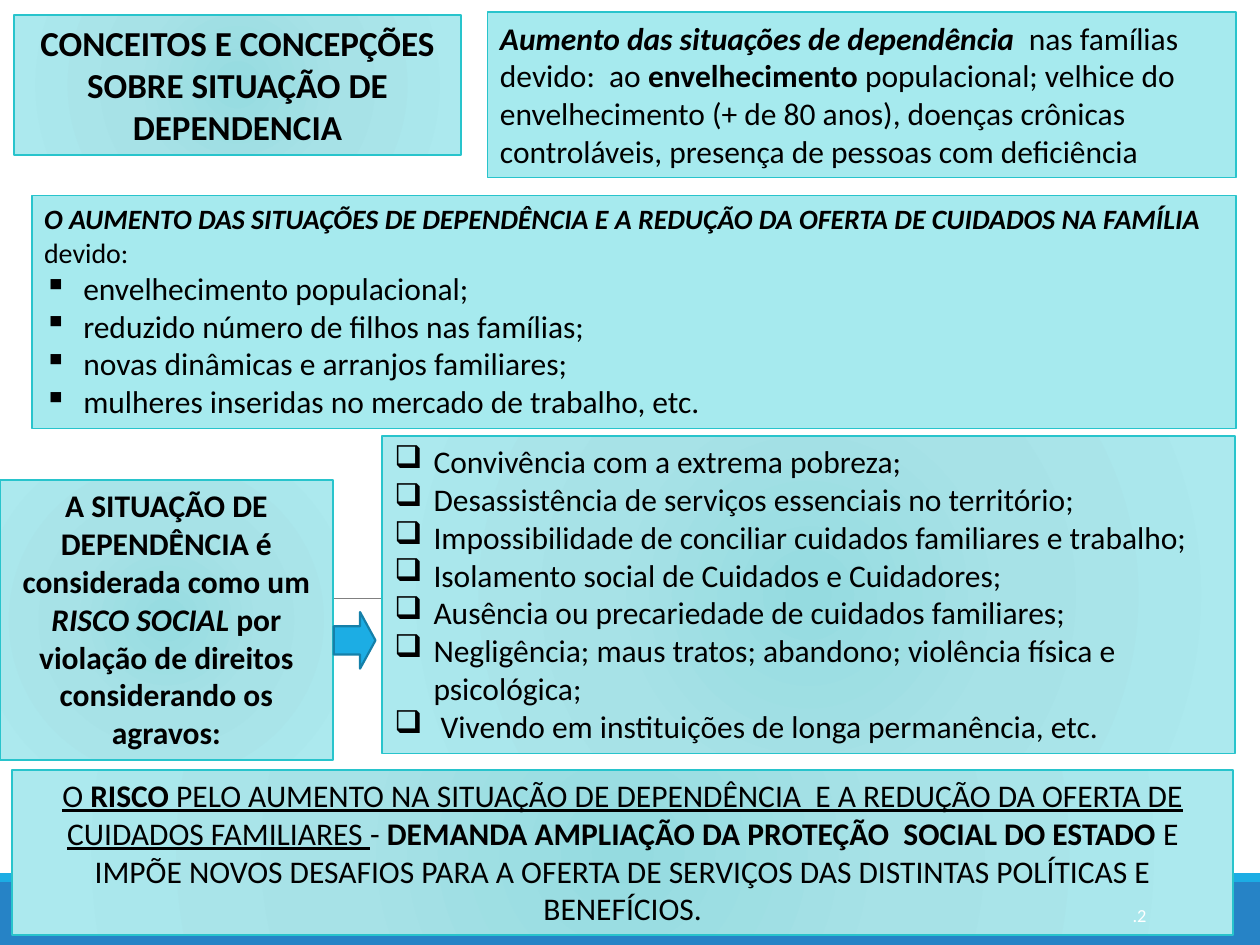
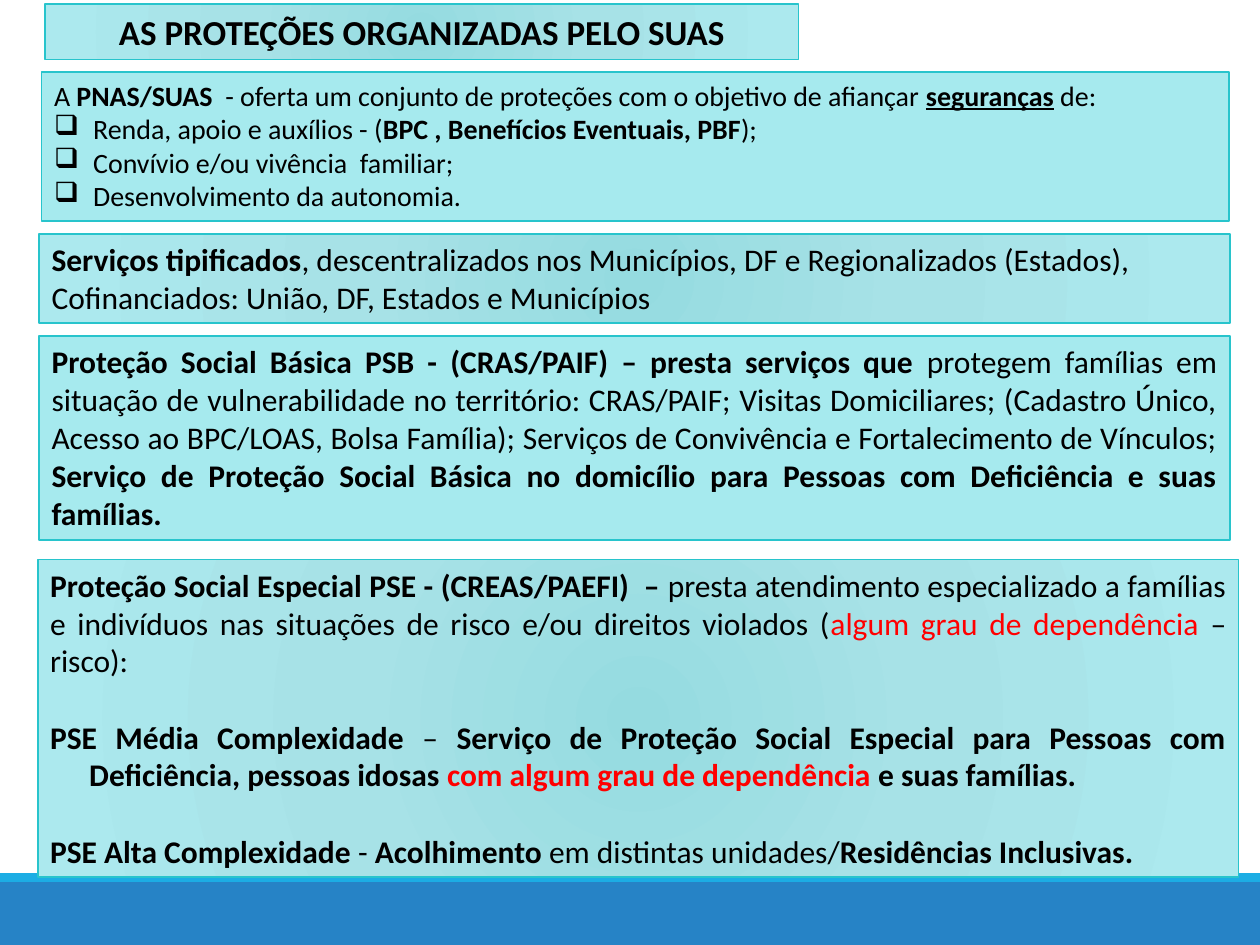
from lxml import etree
from pptx import Presentation
from pptx.dml.color import RGBColor
from pptx.enum.shapes import MSO_CONNECTOR, MSO_SHAPE
from pptx.enum.text import MSO_ANCHOR, MSO_AUTO_SIZE, PP_ALIGN
from pptx.oxml import parse_xml
from pptx.oxml.ns import nsdecls, qn
from pptx.util import Cm, Pt

RECT, ARROW = MSO_SHAPE.RECTANGLE, MSO_SHAPE.RIGHT_ARROW
STRAIGHT = MSO_CONNECTOR.STRAIGHT
TOP, MIDDLE = MSO_ANCHOR.TOP, MSO_ANCHOR.MIDDLE
GROW = MSO_AUTO_SIZE.SHAPE_TO_FIT_TEXT
LEFT, CENTER, RIGHT, JUST = (PP_ALIGN.LEFT, PP_ALIGN.CENTER,
                             PP_ALIGN.RIGHT, PP_ALIGN.JUSTIFY)

BLACK = RGBColor(0x00, 0x00, 0x00)
WHITE = RGBColor(0xFF, 0xFF, 0xFF)
RED = RGBColor(0xFF, 0x00, 0x00)
GRAY = RGBColor(0x80, 0x80, 0x80)
BLUE = RGBColor(0x26, 0x83, 0xC6)
SKY = RGBColor(0x1C, 0xAD, 0xE4)
NAVY = RGBColor(0x15, 0x80, 0xA9)
TEAL = RGBColor(0x28, 0xC4, 0xCC)
AQUA = RGBColor(0xA6, 0xEA, 0xEE)
GLOW = ((0, RGBColor(0x95, 0xDB, 0xE0)),
        (45, RGBColor(0xA7, 0xE2, 0xE7)),
        (100, RGBColor(0xAC, 0xE9, 0xEE)))

FONT = "Calibri"
WIDTH, HEIGHT = 25.4, 19.05
HANG = Cm(0.79)
CHECK, SQUARE = "❑", "▪"


def para(*runs, mark=None, hang=False, size=None, gap=0):
    """Describe a paragraph; a run is text or (text, flags from b, i, u, r)."""
    return dict(runs=runs, mark=mark, hang=hang or bool(mark),
                size=size, gap=gap)


def items(mark, *lines):
    return [para(line, mark=mark) for line in lines]


class Deck:
    """Holds the shared style and the slide being filled."""

    def __init__(self):
        self.prs = Presentation()
        self.prs.slide_width = Cm(WIDTH)
        self.prs.slide_height = Cm(HEIGHT)

    def page(self):
        self.slide = self.prs.slides.add_slide(self.prs.slide_layouts[6])
        self.shape(RECT, (0, 17.78, WIDTH, 1.27), BLUE)
        self.shape(RECT, (0, 17.6, WIDTH, 0.18), SKY)

    def shape(self, kind, at, fill, edge=None, weight=1):
        shape = self.slide.shapes.add_shape(kind, *map(Cm, at))
        shape.shadow.inherit = False
        if fill is GLOW:
            self.glow(shape)
        else:
            shape.fill.solid()
            shape.fill.fore_color.rgb = fill
        if edge is None:
            shape.line.fill.background()
        else:
            shape.line.color.rgb = edge
            shape.line.width = Pt(weight)
        return shape

    def glow(self, shape):
        """Give the shape the radial fill."""
        stops = "".join(
            f'<a:gs pos="{pos * 1000}"><a:srgbClr val="{tone}"/></a:gs>'
            for pos, tone in GLOW)
        shape._element.spPr.insert(2, parse_xml(
            f'<a:gradFill {nsdecls("a")} rotWithShape="1">'
            f'<a:gsLst>{stops}</a:gsLst><a:path path="circle">'
            '<a:fillToRect l="100000" t="100000" r="100000" b="100000"/>'
            '</a:path></a:gradFill>'))

    def rule(self, left, right, top):
        line = self.slide.shapes.add_connector(
            STRAIGHT, Cm(left), Cm(top), Cm(right), Cm(top))
        line.line.color.rgb = GRAY
        line.line.width = Pt(0.5)
        etree.SubElement(line._element.spPr, qn("a:effectLst"))

    def box(self, at, paras, fill=GLOW, align=LEFT, size=18):
        shape = self.shape(RECT, at, fill, TEAL)
        self.put(shape.text_frame, paras, align, size)
        shape.text_frame.auto_size = GROW

    def title(self, at, text):
        self.box(at, [para((text, "b"))], align=CENTER, size=20)

    def label(self, at, text):
        frame = self.slide.shapes.add_textbox(*map(Cm, at)).text_frame
        self.put(frame, [para(text)], RIGHT, 10.5, WHITE, MIDDLE)

    def put(self, frame, paras, align, size, color=BLACK, anchor=TOP):
        frame.word_wrap = True
        frame.vertical_anchor = anchor
        for num, plan in enumerate(paras):
            par = frame.add_paragraph() if num else frame.paragraphs[0]
            par.alignment = align
            par.space_before = Pt(plan["gap"])
            self.indent(par, plan["hang"], plan["mark"])
            for item in plan["runs"]:
                text, flags = (item, "") if isinstance(item, str) else item
                run = par.add_run()
                run.text = text
                font = run.font
                font.name = FONT
                font.size = Pt(plan["size"] or size)
                font.bold = "b" in flags
                font.italic = "i" in flags
                font.underline = "u" in flags
                font.color.rgb = RED if "r" in flags else color

    def indent(self, par, hang, mark):
        props = par._p.get_or_add_pPr()
        if hang:
            props.set("marL", str(HANG))
            props.set("indent", str(-HANG))
        if mark:
            etree.SubElement(props, qn("a:buChar")).set("char", mark)


def risks(deck):
    deck.page()
    deck.rule(2.51, 23.09, 12.07)
    deck.box((0, 9.68, 6.71, 5.64), [para(
        ("A SITUAÇÃO DE DEPENDÊNCIA é considerada como um ", "b"),
        ("RISCO SOCIAL ", "bi"),
        ("por violação de direitos considerando os agravos:", "b"))],
        align=CENTER)
    arrow = deck.shape(ARROW, (6.73, 12.34, 0.84, 1.14), SKY, NAVY, 1.25)
    arrow.adjustments[0] = 0.5
    arrow.adjustments[1] = 0.37
    deck.box((9.83, 0.25, 15.09, 3.33), [para(
        ("Aumento das situações de dependência  ", "bi"),
        "nas famílias devido:  ao ",
        ("envelhecimento", "b"),
        " populacional; velhice do envelhecimento (+ de 80 anos), doenças "
        "crônicas controláveis, presença de pessoas com deficiência")],
        fill=AQUA)
    deck.box((7.7, 8.79, 17.2, 6.4), items(
        CHECK,
        "Convivência com a extrema pobreza;",
        "Desassistência de serviços essenciais no território;",
        "Impossibilidade de conciliar cuidados familiares e trabalho;",
        "Isolamento social de Cuidados e Cuidadores;",
        "Ausência ou precariedade de cuidados familiares;",
        "Negligência; maus tratos; abandono; violência física e psicológica;",
        " Vivendo em instituições de longa permanência, etc."))
    deck.box((0.25, 15.52, 24.61, 3.33), [para(
        ("O ", "u"),
        ("RISCO", "bu"),
        (" PELO AUMENTO NA SITUAÇÃO DE DEPENDÊNCIA  E A REDUÇÃO DA OFERTA "
         "DE CUIDADOS FAMILIARES ", "u"),
        "- ",
        ("DEMANDA AMPLIAÇÃO DA PROTEÇÃO  SOCIAL DO ESTADO ", "b"),
        "E IMPÕE NOVOS DESAFIOS PARA A OFERTA DE SERVIÇOS DAS DISTINTAS "
        "POLÍTICAS E BENEFÍCIOS.")], align=CENTER)
    deck.box((0.64, 3.94, 24.28, 4.7), [
        para(("O AUMENTO DAS SITUAÇÕES DE DEPENDÊNCIA E A REDUÇÃO DA OFERTA "
              "DE CUIDADOS NA FAMÍLIA ", "bi"), "devido:", size=16),
        *items(SQUARE,
               "envelhecimento populacional;",
               "reduzido número de filhos nas famílias;",
               "novas dinâmicas e arranjos familiares;",
               "mulheres inseridas no mercado de trabalho, etc.")], fill=AQUA)
    deck.label((20.62, 17.93, 2.74, 1.02), ".2")
    deck.title((0.28, 0.3, 9.02, 2.82),
               "CONCEITOS E CONCEPÇÕES SOBRE SITUAÇÃO DE DEPENDENCIA")


def shields(deck):
    deck.page()
    deck.box((0.84, 1.45, 23.93, 3), [
        para("A ", ("PNAS/SUAS", "b"),
             "  - oferta um conjunto de proteções com o objetivo de afiançar ",
             ("seguranças", "bu"), " de:"),
        para("Renda, apoio e auxílios - (",
             ("BPC , Benefícios Eventuais, PBF", "b"), ");", mark=CHECK),
        *items(CHECK, "Convívio e/ou vivência  familiar;",
               "Desenvolvimento da autonomia.")],
        fill=AQUA, align=JUST, size=16)
    deck.box((0.79, 6.78, 24, 4.11), [para(
        ("Proteção Social Básica PSB - (CRAS/PAIF) – presta serviços que ",
         "b"),
        "protegem famílias em situação de vulnerabilidade no território: "
        "CRAS/PAIF; Visitas Domiciliares; (Cadastro Único, Acesso ao "
        "BPC/LOAS, Bolsa Família); Serviços de Convivência e "
        "Fortalecimento de Vínculos; ",
        ("Serviço de Proteção Social Básica no domicílio para Pessoas com "
         "Deficiência e suas famílias.", "b"))], fill=AQUA, align=JUST)
    deck.box((0.76, 11.28, 24.21, 6.4), [
        para(("Proteção Social Especial PSE - (CREAS/PAEFI)  – ", "b"),
             "presta atendimento especializado a famílias e indivíduos nas "
             "situações de risco e/ou direitos violados (",
             ("algum grau de dependência ", "r"), "– risco):"),
        para(("PSE Média Complexidade ", "b"), "– ",
             ("Serviço de Proteção Social Especial para Pessoas com "
              "Deficiência, pessoas idosas ", "b"),
             ("com algum grau de dependência ", "br"),
             ("e suas famílias.", "b"), hang=True, gap=22),
        para(("PSE Alta Complexidade ", "b"), "- ", ("Acolhimento", "b"),
             " em distintas unidades/", ("Residências Inclusivas.", "b"),
             hang=True, gap=22)], align=JUST)
    deck.title((0.91, 0.08, 15.19, 1.12), "AS PROTEÇÕES ORGANIZADAS PELO SUAS")
    deck.box((0.79, 4.72, 24, 1.8), [
        para(("Serviços tipificados", "b"),
             ", descentralizados nos Municípios, DF e Regionalizados "
             "(Estados),"),
        para("Cofinanciados: União, DF, Estados e Municípios")])


def main():
    deck = Deck()
    risks(deck)
    shields(deck)
    deck.prs.save("out.pptx")


if __name__ == "__main__":
    main()
